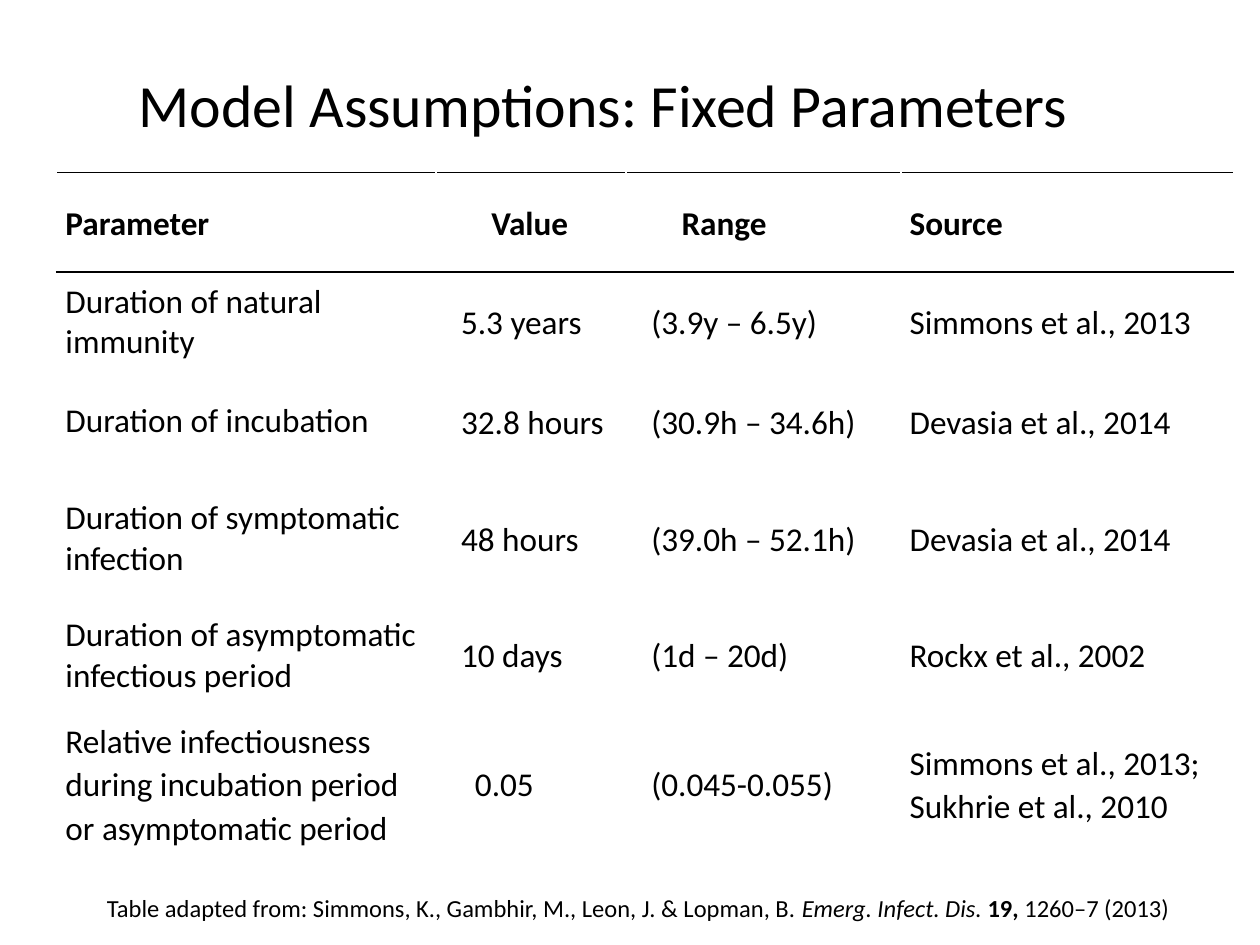
import lxml.etree
import pptx
import pptx.dml.color
import pptx.enum.text
import pptx.oxml.ns
import pptx.util

WIDTH, HEIGHT = 10, 7.5
FONT = "Calibri"
COLORS = {"text": "000000", "rule": "000000", "cell": "FFFFFF"}
COLS = [3.01, 1.51, 2.18, 2.64]
ROWS = [0.79, 0.79, 0.79, 1.07, 0.79, 1.25]
INDENTS = [0, 0.13, 0.13, 0]
HEADER_INDENTS = [0, 0.37, 0.37, 0]
LAST_INDENTS = [0, 0.24, 0.13, 0]
LOOSE = 1.07
PARAMETERS = [
    ["Parameter", "Value", "Range", "Source"],
    ["Duration of natural immunity", "5.3 years", "(3.9y – 6.5y)", "Simmons et al., 2013"],
    ["Duration of incubation", "32.8 hours", "(30.9h – 34.6h)", "Devasia et al., 2014"],
    ["Duration of symptomatic infection", "48 hours", "(39.0h – 52.1h)", "Devasia et al., 2014"],
    ["Duration of asymptomatic infectious period", "10 days", "(1d – 20d)", "Rockx et al., 2002"],
    ["Relative infectiousness during incubation period or asymptomatic period",
     "0.05", "(0.045-0.055)", "Simmons et al., 2013; Sukhrie et al., 2010"],
]
CITATION = [
    ("Table adapted from: Simmons, K., Gambhir, M., Leon, J. & Lopman, B. ", False, False),
    ("Emerg. Infect. Dis. ", False, True),
    ("19,", True, False),
    (" 1260–7 (2013)", False, False),
]


def inches(*values):
    return [pptx.util.Inches(v) for v in values]


def rgb(name):
    return pptx.dml.color.RGBColor.from_string(COLORS[name])


def style(p, size, spacing=1.0):
    p.font.name = FONT
    p.font.size = pptx.util.Pt(size)
    p.font.color.rgb = rgb("text")
    p.line_spacing = spacing


def add_text(s, box, runs, size, spacing=1.0):
    tf = s.shapes.add_textbox(*inches(*box)).text_frame
    tf.word_wrap = True
    p = tf.paragraphs[0]
    style(p, size, spacing)
    for text, bold, italic in runs:
        r = p.add_run()
        r.text = text
        if bold:
            r.font.bold = True
        if italic:
            r.font.italic = True
    return tf


def add_border(cell, side):
    qn = pptx.oxml.ns.qn
    line = lxml.etree.SubElement(cell._tc.get_or_add_tcPr(), qn(f"a:{side}"), w="12700")
    fill = lxml.etree.SubElement(line, qn("a:solidFill"))
    lxml.etree.SubElement(fill, qn("a:srgbClr"), val=COLORS["rule"])


def fill_cell(cell, text, indent, spacing, bold, after, borders):
    for side in borders:
        add_border(cell, side)
    cell.fill.solid()
    cell.fill.fore_color.rgb = rgb("cell")
    cell.margin_left = cell.margin_right = pptx.util.Inches(0.07)
    cell.margin_top = cell.margin_bottom = 0
    cell.vertical_anchor = pptx.enum.text.MSO_ANCHOR.MIDDLE
    cell.text = text
    p = cell.text_frame.paragraphs[0]
    style(p, 19, spacing)
    p.font.bold = bold
    p.space_after = pptx.util.Pt(after)
    p._p.get_or_add_pPr().set("marL", str(pptx.util.Inches(indent)))


def add_parameter_table(s, left, top):
    box = inches(left, top, sum(COLS), sum(ROWS))
    table = s.shapes.add_table(len(ROWS), len(COLS), *box).table
    table.first_row = table.horz_banding = False
    for column, width in zip(table.columns, COLS):
        column.width = pptx.util.Inches(width)
    for row, height in zip(table.rows, ROWS):
        row.height = pptx.util.Inches(height)
    last = len(ROWS) - 1
    indents = {0: HEADER_INDENTS, last: LAST_INDENTS}
    borders = {0: ["lnT", "lnB"], 1: ["lnT"]}
    for i, texts in enumerate(PARAMETERS):
        for j, text in enumerate(texts):
            is_name = i > 0 and j == 0
            single = i == 4 or (is_name and i < last)
            fill_cell(table.cell(i, j), text, indents.get(i, INDENTS)[j],
                      1.0 if single else LOOSE, i == 0,
                      12 if is_name else 0, borders.get(i, []))


def main():
    prs = pptx.Presentation()
    prs.slide_width, prs.slide_height = inches(WIDTH, HEIGHT)
    s = prs.slides.add_slide(prs.slide_layouts[6])
    title = [("Model Assumptions: Fixed Parameters", False, False)]
    tf = add_text(s, (0.1 * WIDTH, 0.47, 0.825 * WIDTH, 0.78), title, 34.2, 0.9)
    tf.vertical_anchor = pptx.enum.text.MSO_ANCHOR.MIDDLE
    add_parameter_table(s, 0.45, 1.37)
    add_text(s, (0.075 * WIDTH, 7.04, 0.875 * WIDTH, 0.34), CITATION, 14)
    prs.save("out.pptx")


if __name__ == "__main__":
    main()
